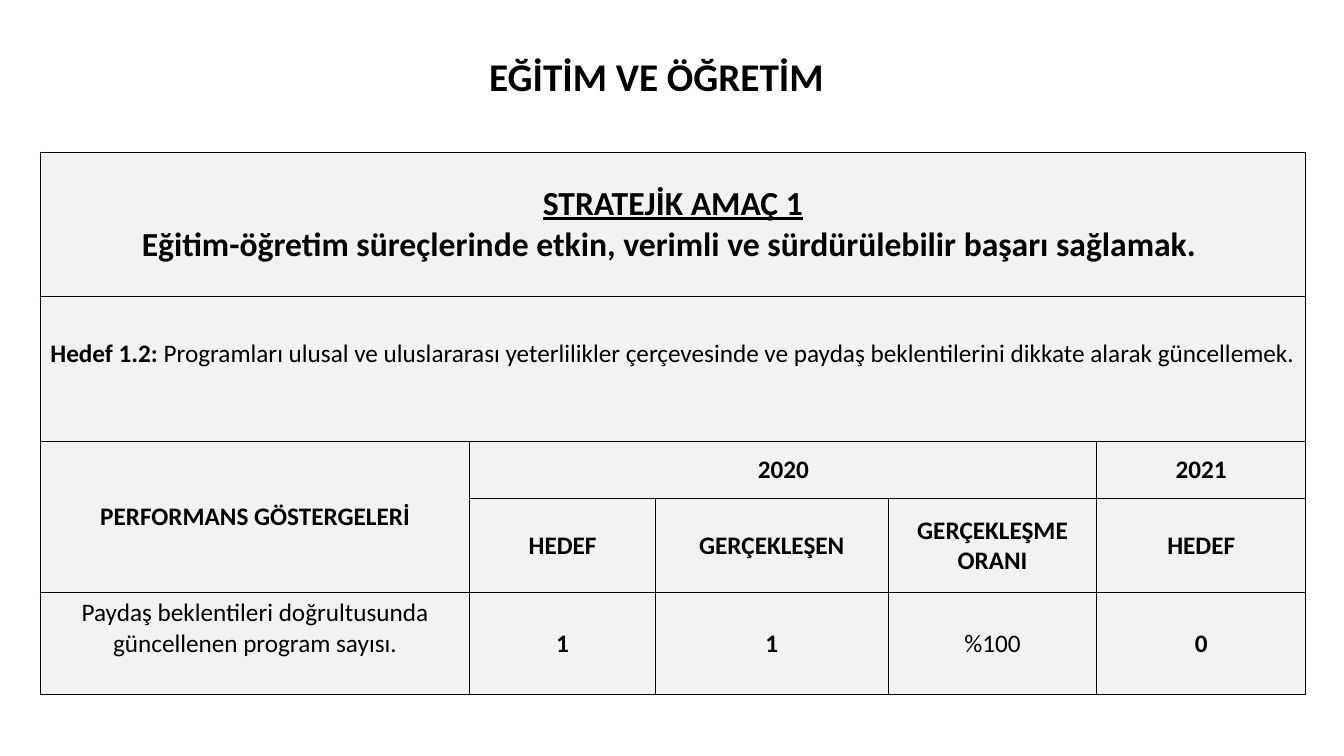
from lxml import etree
from pptx import Presentation
from pptx.dml.color import RGBColor
from pptx.enum import text
from pptx.oxml import ns
from pptx.util import Inches, Pt

COLUMNS = [4.26, 1.84, 2.31, 2.07, 2.07]
ROWS = [1.43, 1.44, 0.57, 0.93, 1.01]
MERGES = [((0, 0), (0, 4)), ((1, 0), (1, 4)), ((2, 0), (3, 0)), ((2, 1), (2, 3))]
YEARS = {(2, 1): "2020", (2, 4): "2021"}
HEADINGS = ["HEDEF", "GERÇEKLEŞEN", "GERÇEKLEŞME ORANI", "HEDEF"]
RESULTS = ["1", "1", "%100", "0"]


def colour(value):
    return RGBColor.from_string(value)


class Page:
    ink, shade, face = "000000", "F2F2F2", "Calibri"

    def __init__(self, deck):
        self.slide = deck.slides.add_slide(deck.slide_layouts[5])

    def style(self, para, size, bold=True, align=text.PP_ALIGN.CENTER):
        para.alignment = align
        font = para.font
        font.name, font.size, font.bold = self.face, Pt(size), bold
        font.color.rgb = colour(self.ink)

    def title(self, words, left, top, width, height):
        box = self.slide.shapes.title
        box.left, box.top = Inches(left), Inches(top)
        box.width, box.height = Inches(width), Inches(height)
        frame = box.text_frame
        frame.text = words
        frame.vertical_anchor = text.MSO_ANCHOR.MIDDLE
        self.style(frame.paragraphs[0], 28)

    def table(self, left, top):
        frame = self.slide.shapes.add_table(
            len(ROWS), len(COLUMNS), Inches(left), Inches(top),
            Inches(sum(COLUMNS)), Inches(sum(ROWS)))
        grid = frame.table
        for column, width in zip(grid.columns, COLUMNS):
            column.width = Inches(width)
        for row, height in zip(grid.rows, ROWS):
            row.height = Inches(height)
        for cell in grid.iter_cells():
            self.frame_cell(cell)
        for first, last in MERGES:
            grid.cell(*first).merge(grid.cell(*last))
        return grid

    def frame_cell(self, cell):
        """Give a cell its black border, grey fill and middle anchor."""
        props = cell._tc.get_or_add_tcPr()
        for side in ("lnL", "lnR", "lnT", "lnB"):
            line = etree.SubElement(props, ns.qn(f"a:{side}"), w=str(Pt(1)))
            fill = etree.SubElement(line, ns.qn("a:solidFill"))
            etree.SubElement(fill, ns.qn("a:srgbClr"), val=self.ink)
        cell.fill.solid()
        cell.fill.fore_color.rgb = colour(self.shade)
        cell.vertical_anchor = text.MSO_ANCHOR.MIDDLE

    def fill_cell(self, cell, words, size=18, bold=True):
        cell.text = words
        for para in cell.text_frame.paragraphs:
            self.style(para, size, bold)


def main():
    deck = Presentation()
    deck.slide_width, deck.slide_height = Inches(13.33), Inches(7.5)
    page = Page(deck)
    page.title("EĞİTİM VE ÖĞRETİM", 0.76, 0.16, 11.5, 1.18)
    grid = page.table(0.4, 1.51)

    aim = grid.cell(0, 0)
    page.fill_cell(aim, "STRATEJİK AMAÇ 1\nEğitim-öğretim süreçlerinde etkin, verimli "
                        "ve sürdürülebilir başarı sağlamak. ", 24)
    aim.text_frame.paragraphs[0].font.underline = True

    goal = grid.cell(1, 0)
    para = goal.text_frame.paragraphs[0]
    page.style(para, 18, False, text.PP_ALIGN.JUSTIFY)
    label = para.add_run()
    label.text = "Hedef 1.2: "
    label.font.bold = True
    para.add_run().text = ("Programları ulusal ve uluslararası yeterlilikler çerçevesinde "
                           "ve paydaş beklentilerini dikkate alarak güncellemek.")
    goal.margin_right = Inches(0.05)

    page.fill_cell(grid.cell(2, 0), "PERFORMANS GÖSTERGELERİ")
    for place, year in YEARS.items():
        page.fill_cell(grid.cell(*place), year)
    for column, (heading, result) in enumerate(zip(HEADINGS, RESULTS), 1):
        page.fill_cell(grid.cell(3, column), heading)
        page.fill_cell(grid.cell(4, column), result, bold=not result.startswith("%"))

    indicator = grid.cell(4, 0)
    page.fill_cell(indicator, "Paydaş beklentileri doğrultusunda güncellenen program sayısı.",
                   bold=False)
    for cell in (goal, indicator):
        cell.margin_bottom = Inches(0.35)
    deck.save("out.pptx")


if __name__ == "__main__":
    main()
